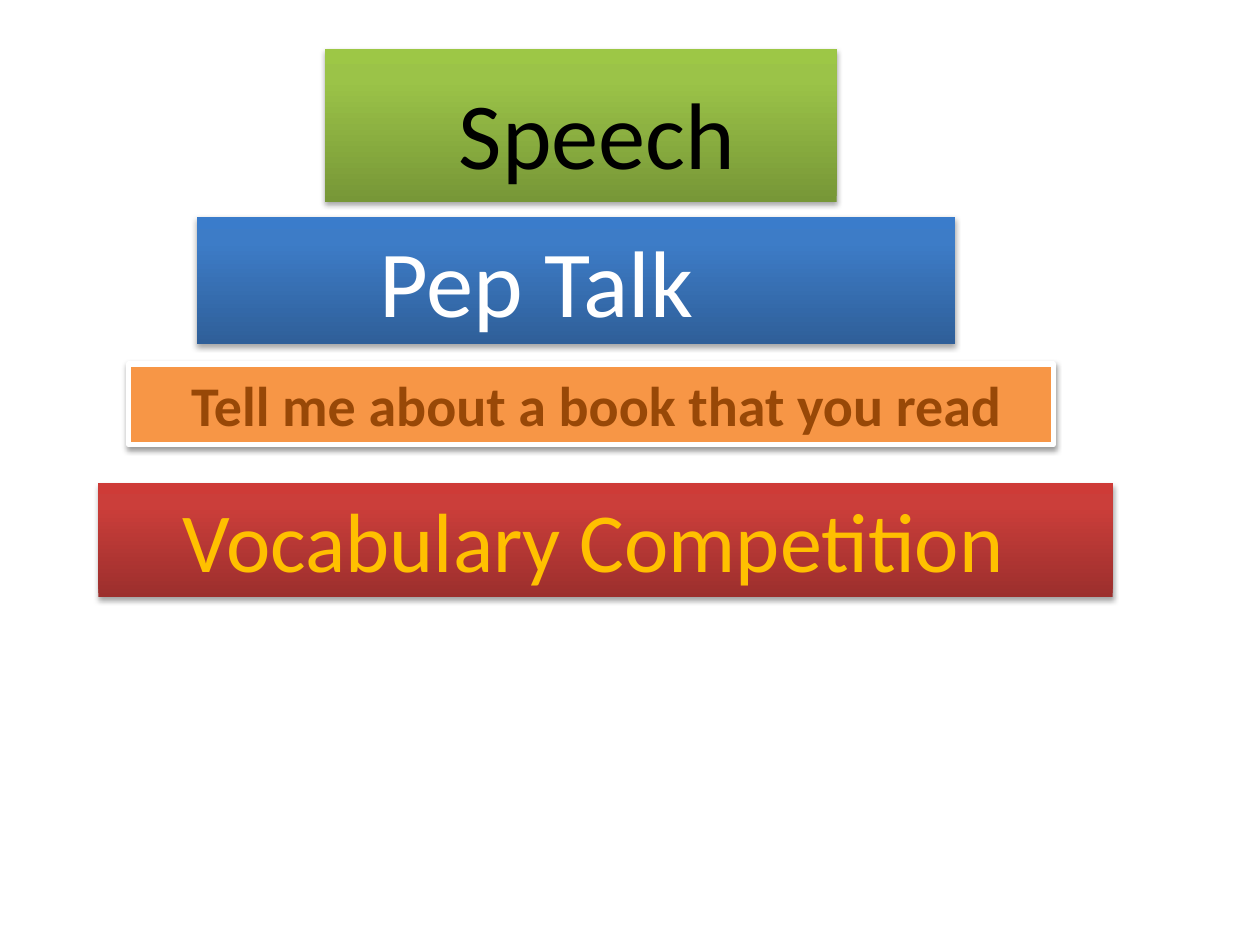
from copy import deepcopy
from dataclasses import dataclass

from lxml import etree
from pptx import Presentation
from pptx import util as u
from pptx.dml.color import RGBColor
from pptx.enum import shapes, text
from pptx.oxml.ns import qn


@dataclass(frozen=True)
class Theme:
    font: str = "Calibri"
    # Gradients run from the bottom edge to the top edge.
    green: tuple = ("779737", "9BC348", "9DC746")
    blue: tuple = ("2F5F99", "3D7CC7", "3A7CCB")
    red: tuple = ("9C2F2D", "CB3E3A", "CE3B37")
    stops: tuple = (0, 0.8, 1)
    orange: str = "F79646"
    brown: str = "984807"
    gold: str = "FFC000"
    white: str = "FFFFFF"
    black: str = "000000"
    title: int = 54
    large: int = 48
    medium: int = 32


THEME = Theme()


def rgb(value):
    return RGBColor.from_string(value)


def fill_gradient(sp, colors):
    sp.fill.gradient()
    sp.fill.gradient_angle = 90
    stop_list = sp._element.spPr.find(qn("a:gradFill")).find(qn("a:gsLst"))
    stop_list.append(deepcopy(stop_list[-1]))
    for stop, color, position in zip(sp.fill.gradient_stops, colors, THEME.stops):
        stop.color.rgb = rgb(color)
        stop.position = position


def add_shadow(sp, distance, opacity):
    """Cast a soft shadow straight down; opacity is in percent."""
    sp.shadow.inherit = False
    effects = sp._element.spPr.find(qn("a:effectLst"))
    shadow = etree.SubElement(
        effects, qn("a:outerShdw"), blurRad=str(u.Pt(3.1)),
        dist=str(u.Pt(distance)), dir="5400000", rotWithShape="0")
    color = etree.SubElement(shadow, qn("a:srgbClr"), val=THEME.black)
    etree.SubElement(color, qn("a:alpha"), val=str(opacity * 1000))


def add_bar(slide, box):
    sp = slide.shapes.add_shape(
        shapes.MSO_SHAPE.RECTANGLE, *(u.Pt(value) for value in box))
    sp.line.fill.background()
    return sp


def add_label(sp, label, size, color, indent, bold=False, top=3.6, bottom=3.6):
    tf = sp.text_frame
    tf.word_wrap = True
    tf.auto_size = text.MSO_AUTO_SIZE.SHAPE_TO_FIT_TEXT
    tf.vertical_anchor = text.MSO_ANCHOR.TOP
    tf.margin_left = u.Pt(7.2 + indent)
    tf.margin_top, tf.margin_bottom = u.Pt(top), u.Pt(bottom)
    p = tf.paragraphs[0]
    p.alignment = text.PP_ALIGN.LEFT
    r = p.add_run()
    r.text = label
    r.font.name = THEME.font
    r.font.size = u.Pt(size)
    r.font.bold = bold
    r.font.color.rgb = rgb(color)


def add_gradient_bar(slide, box, colors, *label, **options):
    sp = add_bar(slide, box)
    fill_gradient(sp, colors)
    add_shadow(sp, 1.8, 35)
    add_label(sp, *label, **options)


def add_framed_bar(slide, box, *label, **options):
    sp = add_bar(slide, box)
    sp.fill.solid()
    sp.fill.fore_color.rgb = rgb(THEME.orange)
    sp.line.color.rgb = rgb(THEME.white)
    sp.line.width = u.Pt(3)
    add_shadow(sp, 1.6, 38)
    add_label(sp, *label, **options)


def main():
    prs = Presentation()
    prs.slide_width, prs.slide_height = u.Pt(720), u.Pt(540)
    slide = prs.slides.add_slide(prs.slide_layouts[6])

    add_framed_bar(slide, (73.5, 208.1, 528.5, 46.1),
                   "Tell me about a book that you read",
                   THEME.medium, THEME.brown, 28.5, bold=True)
    add_gradient_bar(slide, (56.2, 275.8, 579.6, 65.5), THEME.red,
                     "Vocabulary Competition", THEME.large, THEME.gold, 40.7)
    add_gradient_bar(slide, (112.3, 123.8, 433.4, 72.7), THEME.blue,
                     "Pep Talk", THEME.title, THEME.white, 97.6)
    add_gradient_bar(slide, (185.8, 28.1, 292.3, 87.1), THEME.green,
                     "Speech", THEME.title, THEME.black, 69.1,
                     top=15, bottom=6.8)

    prs.save("out.pptx")


if __name__ == "__main__":
    main()
